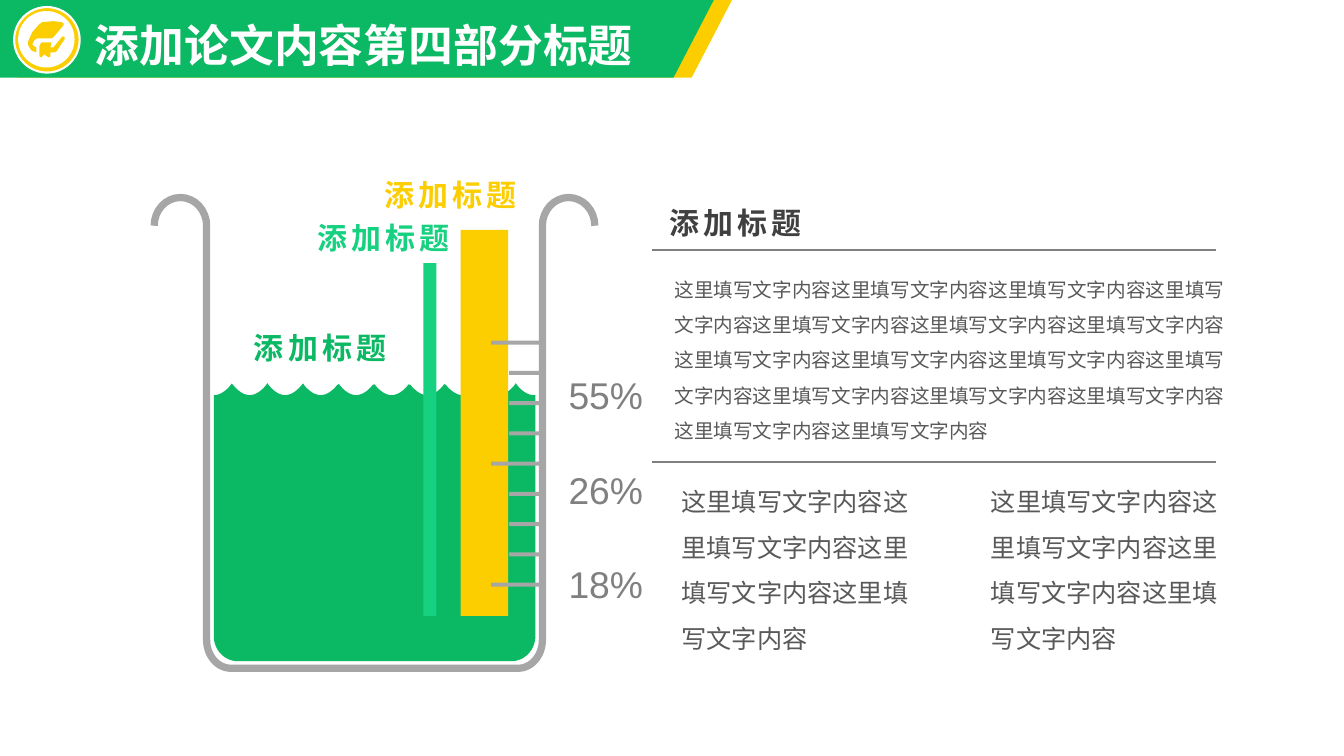
import math

from pptx import Presentation
from pptx import util as u
from pptx.dml.color import RGBColor
from pptx.enum import shapes, text
from pptx.oxml.xmlchemy import OxmlElement

COLORS = {name: RGBColor.from_string(value) for name, value in {
    "green": "0BB863", "mint": "16D180", "yellow": "FCCE00", "white": "FFFFFF",
    "glass": "A6A6A6", "gray": "808080", "heading": "404040", "body": "595959",
}.items()}
FONT = "Arial"

presentation = Presentation()
presentation.slide_width, presentation.slide_height = u.Inches(13.33), u.Inches(7.5)
slide = presentation.slides.add_slide(presentation.slide_layouts[5])


def arc(center_x, center_y, radius_x, radius_y, start, end, steps=16):
    """Points along an ellipse, with angles in degrees clockwise from the right."""
    angles = [math.radians(start + (end - start) * i / steps) for i in range(steps + 1)]
    return [(center_x + radius_x * math.cos(a), center_y + radius_y * math.sin(a))
            for a in angles]


def add_outline(points, color, line_width=None):
    """Filled polygon, or an open stroke when a line width is given; points in inches."""
    corners = [(u.Inches(x), u.Inches(y)) for x, y in points]
    builder = slide.shapes.build_freeform(*corners[0])
    builder.add_line_segments(corners[1:], close=line_width is None)
    shape = builder.convert_to_shape()
    shape.shadow.inherit = False
    if line_width is None:
        shape.fill.solid()
        shape.fill.fore_color.rgb = COLORS[color]
        shape.line.fill.background()
    else:
        shape.fill.background()
        shape.line.color.rgb = COLORS[color]
        shape.line.width = u.Pt(line_width)
    return shape


# Title banner
for left, color in ((0.18, "yellow"), (0, "green")):
    banner = add_outline(
        [(left, 0), (left + 7.08, 0), (left + 6.68, 0.77), (left, 0.77)], color)

title = slide.shapes.title
banner._element.addnext(title._element)
title.left, title.top = u.Inches(0.84), u.Inches(-0.14)
title.width, title.height = u.Inches(6.24), u.Inches(0.91)
title.text_frame.text = "添加论文内容第四部分标题"
title.text_frame.vertical_anchor = text.MSO_ANCHOR.TOP
title.text_frame.auto_size = text.MSO_AUTO_SIZE.NONE
paragraph = title.text_frame.paragraphs[0]
paragraph.alignment = text.PP_ALIGN.LEFT
paragraph.line_spacing = 1.5
font = paragraph.runs[0].font
font.name, font.size, font.bold = FONT, u.Pt(32), True
font.color.rgb = COLORS["white"]

# Badge with a graduation cap
for left, top, size, color in ((0.14, 0.07, 0.65, "yellow"), (0.18, 0.11, 0.56, "white")):
    disc = slide.shapes.add_shape(
        shapes.MSO_SHAPE.OVAL, *map(u.Inches, (left, top, size, size)))
    disc.shadow.inherit = False
    disc.fill.solid()
    disc.fill.fore_color.rgb = COLORS[color]
    if color == "yellow":
        disc.line.color.rgb = COLORS["white"]
        disc.line.width = u.Pt(1.5)
    else:
        disc.line.fill.background()
cap_top = [(0.53, 0.21), (0.61, 0.22), (0.63, 0.23), (0.63, 0.25), (0.53, 0.37),
           (0.51, 0.38), (0.37, 0.38), (0.34, 0.4), (0.32, 0.44), (0.34, 0.46),
           (0.36, 0.47), (0.36, 0.52), (0.31, 0.5), (0.28, 0.45), (0.28, 0.41),
           (0.32, 0.32), (0.39, 0.24), (0.42, 0.22)]
cap_ribbon = [(0.62, 0.36), (0.64, 0.37), (0.64, 0.39), (0.56, 0.51), (0.54, 0.52),
              (0.5, 0.52), (0.5, 0.56), (0.48, 0.57), (0.44, 0.54), (0.41, 0.57),
              (0.39, 0.56), (0.39, 0.46), (0.41, 0.42), (0.51, 0.42), (0.5, 0.47),
              (0.53, 0.47)]
for points in (cap_top, cap_ribbon):
    add_outline(points, "yellow")

# Beaker glass
add_outline([
    *arc(1.79, 2.24, 0.26, 0.28, 180, 360),
    *arc(2.29, 6.35, 0.24, 0.28, 180, 90),
    *arc(5.14, 6.35, 0.24, 0.28, 90, 0),
    *arc(5.64, 2.24, 0.26, 0.28, 180, 360),
], "glass", 5.2)

# Liquid with a scalloped surface
liquid_left, liquid_right, first_crest, wave = 2.12, 5.31, 2.3, 0.352
samples = 180
surface = []
for i in range(samples + 1):
    x = liquid_left + (liquid_right - liquid_left) * i / samples
    dip = abs(math.sin(math.pi * (x - first_crest) / wave)) ** 0.8
    surface.append((x, 3.8 + 0.12 * dip))
add_outline([
    *surface,
    *arc(5.07, 6.31, 0.24, 0.25, 0, 90),
    *arc(2.36, 6.31, 0.24, 0.25, 90, 180),
], "green")

# Bars and scale marks
bars = [(4.57, 2.28, 0.47, 3.83, "yellow"), (4.2, 2.61, 0.13, 3.5, "mint")]
for mark in range(9):
    left = 4.87 if mark % 4 == 0 else 5.05
    bars.append((left, 3.38 + 0.3 * mark, 5.36 - left, 0.04, "glass"))
for *box, color in bars:
    bar = slide.shapes.add_shape(shapes.MSO_SHAPE.RECTANGLE, *map(u.Inches, box))
    bar.shadow.inherit = False
    bar.fill.solid()
    bar.fill.fore_color.rgb = COLORS[color]
    bar.line.fill.background()

# Rules above and below the main paragraph
for y in (2.48, 4.58):
    rule = slide.shapes.add_connector(
        shapes.MSO_CONNECTOR.STRAIGHT, *map(u.Inches, (6.47, y, 12.06, y)))
    rule.line.color.rgb = COLORS["gray"]
    rule.line.width = u.Pt(1.25)
    rule._element.spPr.append(OxmlElement("a:effectLst"))

# Labels: left, top, width, height, wording, size, colour, alignment
LEFT, CENTER, RIGHT = text.PP_ALIGN.LEFT, text.PP_ALIGN.CENTER, text.PP_ALIGN.RIGHT
labels = [(5.54, top, 0.95, 0.55, value, 26.6, "gray", LEFT)
          for top, value in ((3.64, "55%"), (4.59, "26%"), (5.52, "18%"))]
headings = [(left, top, 1.57, 0.46, "添加标题", 21.4, color, alignment)
            for left, top, color, alignment in (
                (6.54, 1.98, "heading", LEFT), (3.65, 1.7, "yellow", RIGHT),
                (2.99, 2.13, "mint", RIGHT), (2.39, 3.22, "green", CENTER))]
filler = "这里填写文字内容"
bodies = [(6.59, 2.59, 5.75, 1.83, filler * 16, 14, "body", LEFT)]
bodies += [(left, 4.63, 2.58, 1.92, filler * 4, 18, "body", LEFT) for left in (6.66, 9.73)]

for group in (labels, headings, bodies):
    for *box, wording, size, color, alignment in group:
        frame = slide.shapes.add_textbox(*map(u.Inches, box)).text_frame
        frame.word_wrap = group is bodies
        frame.auto_size = text.MSO_AUTO_SIZE.SHAPE_TO_FIT_TEXT
        paragraph = frame.paragraphs[0]
        paragraph.alignment = alignment
        if group is bodies:
            paragraph.line_spacing = 1.5
        run = paragraph.add_run()
        run.text = wording
        run.font.name, run.font.size = FONT, u.Pt(size)
        run.font.color.rgb = COLORS[color]
        if group is headings:
            run.font.bold = True
            run.font._element.set("spc", "300")

presentation.save("out.pptx")
